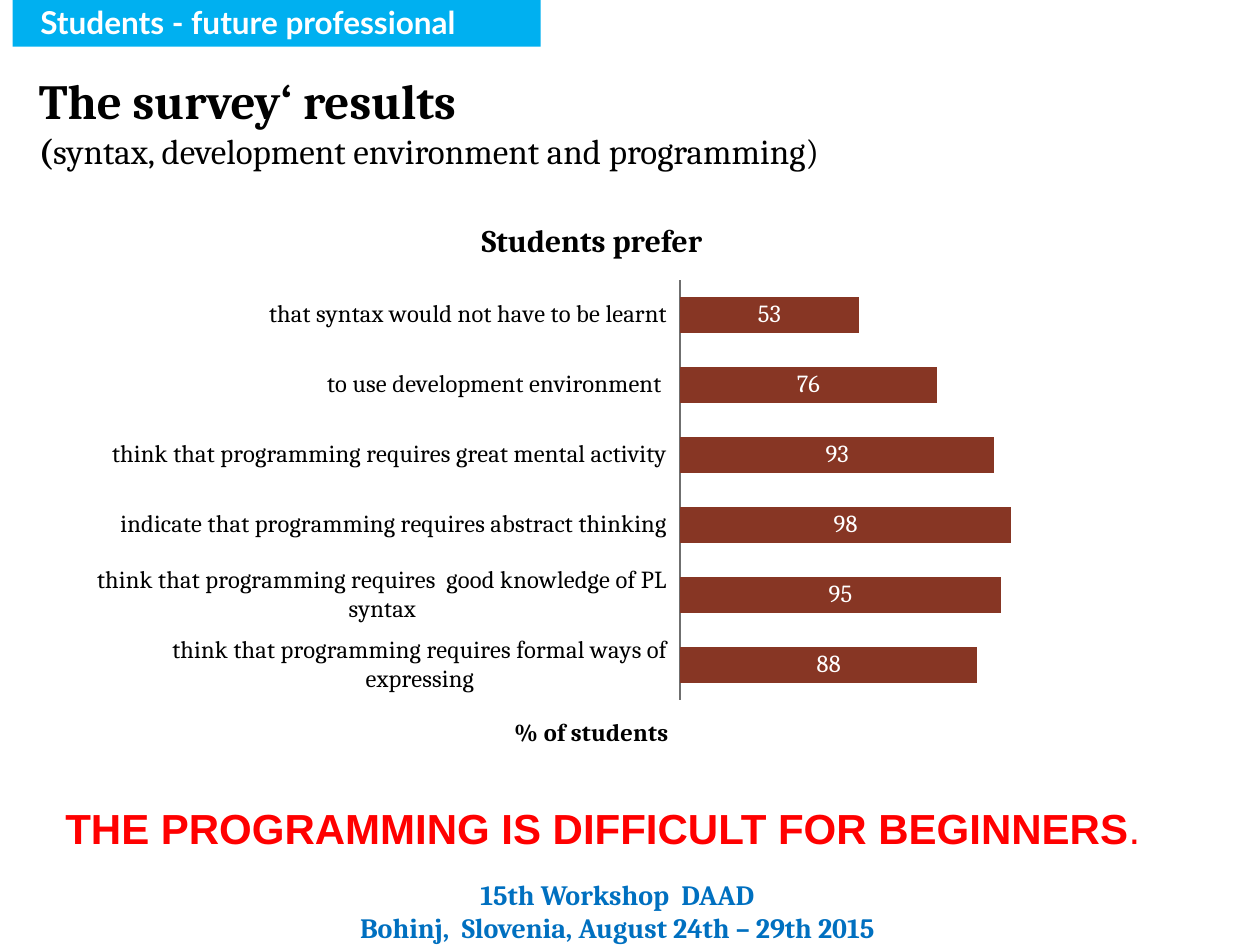
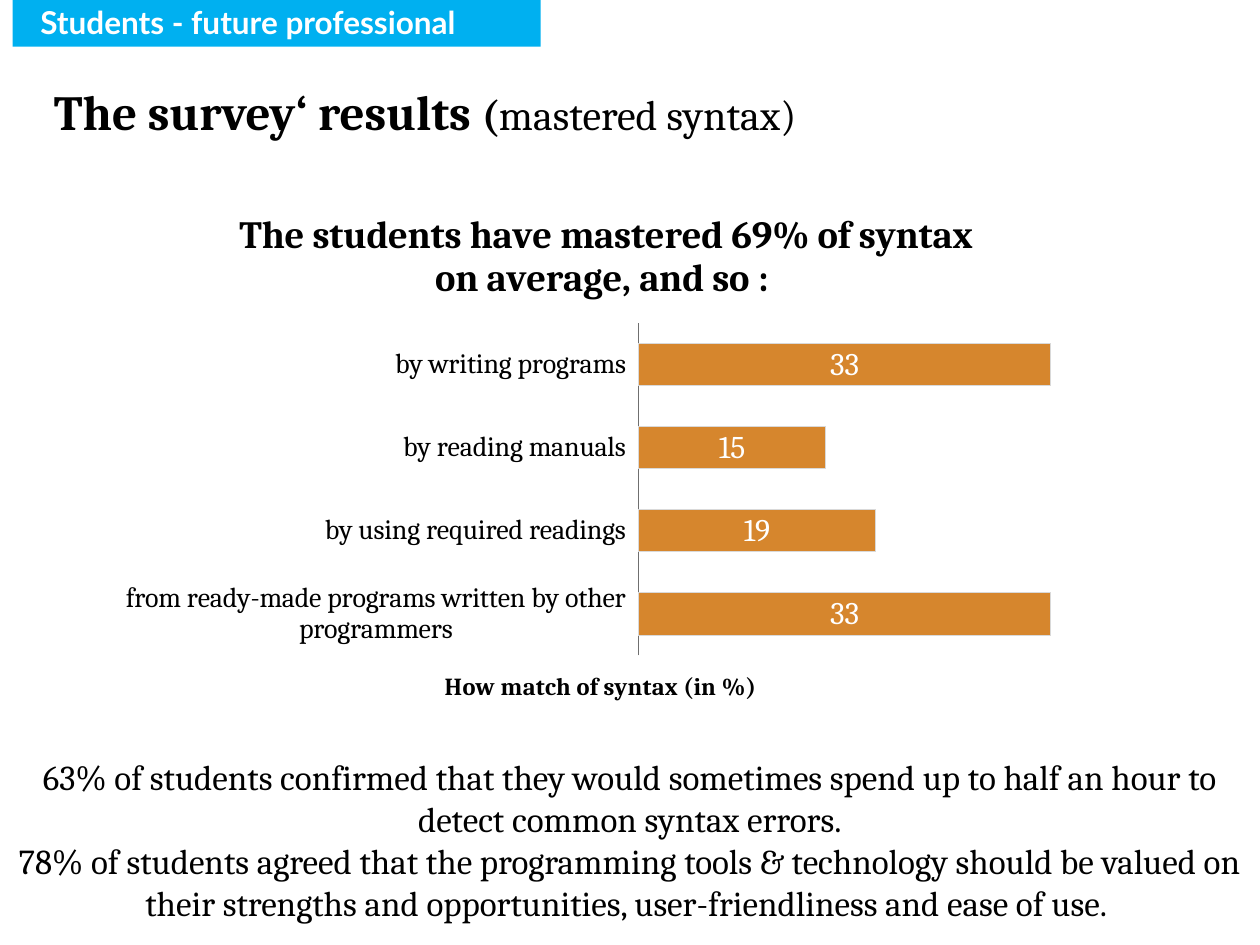
from dataclasses import dataclass
from typing import Optional

from lxml.etree import SubElement
from pptx import Presentation
from pptx.chart.data import CategoryChartData
from pptx.dml.color import RGBColor
from pptx.enum.chart import XL_CHART_TYPE, XL_LABEL_POSITION, XL_TICK_LABEL_POSITION, XL_TICK_MARK
from pptx.enum.shapes import MSO_SHAPE
from pptx.enum.text import MSO_ANCHOR, MSO_AUTO_SIZE, PP_ALIGN
from pptx.oxml.ns import qn
from pptx.util import Inches, Pt

COLORS = {
    "text": "000000",
    "white": "FFFFFF",
    "band": "00B0F0",
    "alert": "FF0000",
    "footer": "0070C0",
    "brown": "873624",
    "orange": "D6862D",
    "bar_edge": "D9D9D9",
    "axis": "6F6F6F",
}
SERIF = "Cambria"


@dataclass
class Span:
    """A stretch of text with its own size and weight."""
    text: str
    size: float
    bold: bool = False


@dataclass
class SurveyChart:
    """A survey question drawn as horizontal bars."""
    box: tuple[float, float, float, float]
    plot: tuple[float, float, float, float]  # fractions of the chart
    title: str
    title_size: float
    axis_title: str
    answers: dict[str, int]
    maximum: int
    category_size: float
    label_size: float
    color: str
    edge: Optional[str] = None


def rgb(name: str) -> RGBColor:
    return RGBColor.from_string(COLORS[name])


def style_font(font, size: float, bold: bool = False, color: str = "text", name: str = SERIF) -> None:
    font.name, font.size, font.bold = name, Pt(size), bold
    font.color.rgb = rgb(color)


def write_text(frame, paragraphs: list[list[Span]], *, color: str = "text", font: str = SERIF,
               align: PP_ALIGN = PP_ALIGN.LEFT) -> None:
    for index, spans in enumerate(paragraphs):
        paragraph = frame.paragraphs[0] if index == 0 else frame.add_paragraph()
        paragraph.alignment = align
        for span in spans:
            run = paragraph.add_run()
            run.text = span.text
            style_font(run.font, span.size, span.bold, color, font)


def add_text(slide, box: tuple[float, float, float, float], paragraphs: list[list[Span]], *,
             anchor: MSO_ANCHOR = MSO_ANCHOR.TOP, grow: bool = True, **text_format) -> None:
    frame = slide.shapes.add_textbox(*map(Inches, box)).text_frame
    frame.word_wrap = True
    frame.auto_size = MSO_AUTO_SIZE.SHAPE_TO_FIT_TEXT if grow else MSO_AUTO_SIZE.NONE
    frame.vertical_anchor = anchor
    write_text(frame, paragraphs, **text_format)


def add_band(slide) -> None:
    shape = slide.shapes.add_shape(MSO_SHAPE.RECTANGLE, *map(Inches, (0.1, -0.02, 4.19, 0.39)))
    shape.shadow.inherit = False
    shape.fill.solid()
    shape.fill.fore_color.rgb = rgb("band")
    shape.line.fill.background()
    frame = shape.text_frame
    frame.word_wrap = True
    frame.margin_left = Inches(0.22)
    frame.vertical_anchor = MSO_ANCHOR.MIDDLE
    write_text(frame, [[Span("Students - future professional", 18, True)]], color="white", font="Lato")


def place_plot(chart, plot: tuple[float, float, float, float]) -> None:
    """Fix the inner plot area, which needs XML."""
    plot_area = chart.plots[0]._element.getparent()
    for old_layout in plot_area.findall(qn("c:layout")):
        plot_area.remove(old_layout)
    layout = SubElement(plot_area, qn("c:layout"))
    plot_area.insert(0, layout)
    manual = SubElement(layout, qn("c:manualLayout"))
    settings = [("layoutTarget", "inner"), ("xMode", "edge"), ("yMode", "edge")]
    settings += zip("xywh", map(str, plot))
    for tag, value in settings:
        SubElement(manual, qn(f"c:{tag}")).set("val", value)


def add_survey_chart(slide, survey: SurveyChart) -> None:
    data = CategoryChartData()
    data.categories = list(survey.answers)
    data.add_series("Series 1", list(survey.answers.values()))
    chart = slide.shapes.add_chart(XL_CHART_TYPE.BAR_STACKED, *map(Inches, survey.box), data).chart
    style_font(chart.font, 10)
    chart.has_legend = False
    chart.has_title = True
    write_text(chart.chart_title.text_frame, [[Span(survey.title, survey.title_size, True)]],
               align=PP_ALIGN.CENTER)
    chart.chart_title.include_in_layout = False

    # Axes
    categories = chart.category_axis
    categories.major_tick_mark = categories.minor_tick_mark = XL_TICK_MARK.NONE
    categories.tick_label_position = XL_TICK_LABEL_POSITION.LOW
    categories.has_major_gridlines = False
    categories.format.line.color.rgb = rgb("axis")
    style_font(categories.tick_labels.font, survey.category_size)
    values = chart.value_axis
    values.minimum_scale, values.maximum_scale = 0, survey.maximum
    values.has_major_gridlines = False
    values.has_title = True
    write_text(values.axis_title.text_frame, [[Span(survey.axis_title, 14, True)]],
               align=PP_ALIGN.CENTER)
    values.visible = False

    # Bars and their values
    bars = chart.plots[0]
    bars.gap_width, bars.overlap = 95, 100
    bars.vary_by_categories = False
    bar_format = bars.series[0].format
    bar_format.fill.solid()
    bar_format.fill.fore_color.rgb = rgb(survey.color)
    if survey.edge:
        bar_format.line.color.rgb = rgb(survey.edge)
    else:
        bar_format.line.fill.background()
    labels = bars.series[0].data_labels
    labels.show_value = True
    labels.position = XL_LABEL_POSITION.CENTER
    style_font(labels.font, survey.label_size, color="white")
    place_plot(chart, survey.plot)


PREFERENCES = SurveyChart(
    box=(0.67, 1.55, 8.11, 4.61), plot=(0.583, 0.146, 0.397, 0.723),
    title="Students prefer ", title_size=18, axis_title="% of students",
    answers={
        "think that programming requires formal ways of expressing": 88,
        "think that programming requires  good knowledge of PL syntax": 95,
        "indicate that programming requires abstract thinking": 98,
        "think that programming requires great mental activity": 93,
        "to use development environment ": 76,
        "that syntax would not have to be learnt": 53,
    },
    maximum=120, category_size=14, label_size=14, color="brown",
)
MASTERED_SYNTAX = SurveyChart(
    box=(0.91, 1.47, 7.8, 4.33), plot=(0.533, 0.253, 0.445, 0.609),
    title="The students have mastered 69% of syntax on average, and so : ", title_size=22,
    axis_title="How match of syntax (in %)",
    answers={
        "from ready-made programs written by other programmers": 33,
        "by using required readings": 19,
        "by reading manuals": 15,
        "by writing programs": 33,
    },
    maximum=35, category_size=16, label_size=18, color="orange", edge="bar_edge",
)


def build_preferences(slide) -> None:
    add_text(slide, (0.21, 0.51, 9.52, 0.91), [
        [Span("The survey‘ results", 28, True)],
        [Span("(", 20, True), Span("syntax, development environment and programming)", 20)],
    ])
    add_text(slide, (0.42, 6.32, 8.88, 0.5), [
        [Span("THE PROGRAMMING IS DIFFICULT FOR BEGINNERS", 24, True), Span(".", 24)],
    ], color="alert", font="Arial")
    add_band(slide)
    add_survey_chart(slide, PREFERENCES)
    footer = ["15th Workshop  DAAD", "Bohinj,  Slovenia, August 24th – 29th 2015"]
    add_text(slide, (2.27, 6.98, 5.26, 0.5), [[Span(line, 16, True)] for line in footer],
             anchor=MSO_ANCHOR.MIDDLE, grow=False, color="footer", align=PP_ALIGN.CENTER)


def build_mastered_syntax(slide) -> None:
    add_band(slide)
    add_text(slide, (0.33, 0.6, 9.52, 0.57), [
        [Span("The survey‘ results ", 28, True), Span("(", 24, True), Span("mastered syntax)", 24)],
    ])
    findings = [
        "63% of students confirmed that they would sometimes spend up to half an hour to detect "
        "common syntax errors.",
        "78% of students agreed that the programming tools & technology should be valued on their "
        "strengths and opportunities, user-friendliness and ease of use. ",
    ]
    add_text(slide, (0, 5.95, 10, 1.45), [[Span(finding, 20)] for finding in findings],
             align=PP_ALIGN.CENTER)
    add_survey_chart(slide, MASTERED_SYNTAX)


def main() -> None:
    presentation = Presentation()
    presentation.slide_width, presentation.slide_height = Inches(10), Inches(7.5)
    for build in (build_preferences, build_mastered_syntax):
        build(presentation.slides.add_slide(presentation.slide_layouts[6]))
    presentation.save("out.pptx")


if __name__ == "__main__":
    main()
